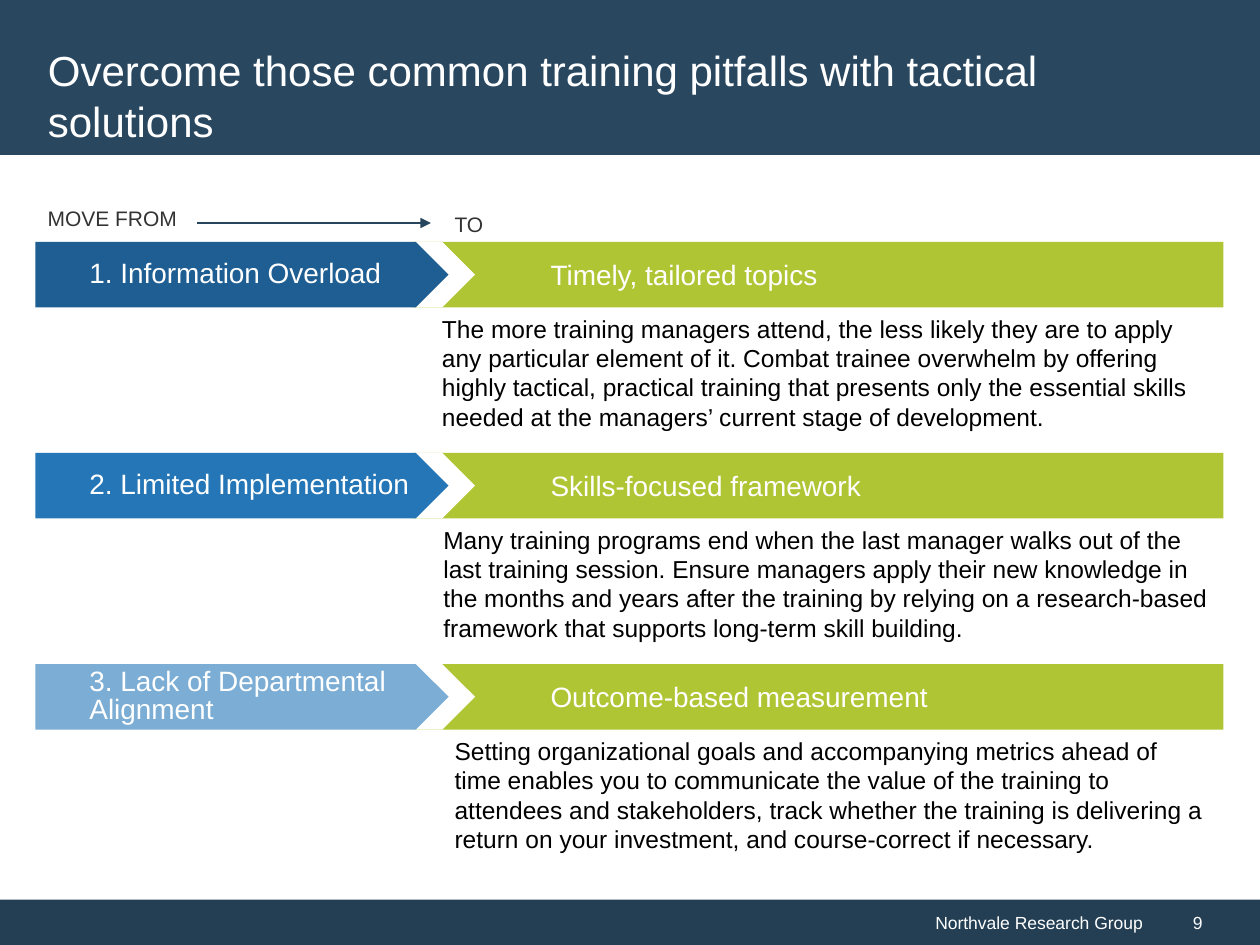
from pptx import Presentation
from pptx.dml.color import RGBColor
from pptx.enum.shapes import MSO_CONNECTOR, MSO_SHAPE
from pptx.enum.text import MSO_ANCHOR, MSO_AUTO_SIZE, PP_ALIGN
from pptx.oxml.ns import qn
from pptx.util import Inches, Pt
from lxml import etree

RECT, PENTAGON = MSO_SHAPE.RECTANGLE, MSO_SHAPE.PENTAGON
STRAIGHT = MSO_CONNECTOR.STRAIGHT
LEFT, RIGHT = PP_ALIGN.LEFT, PP_ALIGN.RIGHT
TOP, MIDDLE = MSO_ANCHOR.TOP, MSO_ANCHOR.MIDDLE

SLIDE_W, SLIDE_H = 10, 7.5
MARGIN, CONTENT_RIGHT = 0.28, 9.71
ROW_TOP, ROW_PITCH, BAR_H = 1.92, 1.675, 0.52
TITLE_ONLY = 5

# Pitfall, its colour, the solution, the explanation and its left edge
ROWS = [
    ("1. Information Overload", "1E5E92", "Timely, tailored topics",
     "The more training managers attend, the less likely they are to apply any "
     "particular element of it. Combat trainee overwhelm by offering highly "
     "tactical, practical training that presents only the essential skills needed "
     "at the managers’ current stage of development.", 3.41),
    ("2. Limited Implementation", "2576B7", "Skills-focused framework",
     "Many training programs end when the last manager walks out of the last "
     "training session. Ensure managers apply their new knowledge in the months "
     "and years after the training by relying on a research-based framework that "
     "supports long-term skill building.", 3.42),
    ("3. Lack of Departmental Alignment", "7CADD4", "Outcome-based measurement",
     "Setting organizational goals and accompanying metrics ahead of time enables "
     "you to communicate the value of the training to attendees and stakeholders, "
     "track whether the training is delivering a return on your investment, and "
     "course-correct if necessary.", 3.51),
]


def colour(hex_string):
    return RGBColor.from_string(hex_string)


def write(shape, text, size, hex_string, align=LEFT, anchor=MIDDLE,
          insets=(0.1, 0.05, 0.1, 0.05), spacing=None):
    frame = shape.text_frame
    frame.word_wrap = True
    frame.auto_size = MSO_AUTO_SIZE.NONE
    frame.vertical_anchor = anchor
    (frame.margin_left, frame.margin_top,
     frame.margin_right, frame.margin_bottom) = map(Inches, insets)
    frame.text = text
    paragraph = frame.paragraphs[0]
    paragraph.alignment = align
    paragraph.line_spacing = spacing
    paragraph.font.name = "Arial"
    paragraph.font.size = Pt(size)
    paragraph.font.color.rgb = colour(hex_string)


def add_block(slide, kind, box, fill):
    block = slide.shapes.add_shape(kind, *map(Inches, box))
    block.shadow.inherit = False
    block.fill.solid()
    block.fill.fore_color.rgb = colour(fill)
    block.line.fill.background()
    return block


def add_text(slide, box, text, size, hex_string):
    write(slide.shapes.add_textbox(*map(Inches, box)), text, size, hex_string, anchor=TOP)


def add_header(slide, box, text):
    add_block(slide, RECT, box, "29475F")
    left, top, width, height = box
    title = slide.shapes.title
    title.left, title.top = Inches(left + MARGIN), Inches(top + MARGIN)
    title.width, title.height = Inches(CONTENT_RIGHT - MARGIN), Inches(height - MARGIN)
    write(title, text, 24, "FFFFFF")
    # Bring the title in front of its band
    slide.shapes._spTree.append(title._element)


def add_footer(slide, box, owner, number):
    left, top, width, height = box
    split = width * 11 / 12
    owner_block = add_block(slide, RECT, (left, top, split, height), "243F54")
    write(owner_block, owner, 10, "FFFFFF", align=RIGHT)
    number_block = add_block(slide, RECT, (left + split, top, width - split, height), "243F54")
    write(number_block, number, 10, "FFFFFF", insets=(0.3, 0.05, 0.1, 0.05))


def add_direction(slide, box):
    left, top, width, height = box
    add_text(slide, (left, top, 1.97, height), "MOVE FROM", 12, "333333")
    add_text(slide, (left + 3.23, top + 0.05, 1.97, height), "TO", 12, "333333")
    arrow_y = Inches(top + 0.19)
    arrow = slide.shapes.add_connector(
        STRAIGHT, Inches(left + 1.28), arrow_y, Inches(left + 3.14), arrow_y)
    arrow.line.color.rgb = colour("27465E")
    arrow.line.width = Pt(0.75)
    etree.SubElement(arrow.line._get_or_add_ln(), qn("a:tailEnd"), type="triangle")
    etree.SubElement(arrow._element.spPr, qn("a:effectLst"))


def add_row(slide, box, pitfall, fill, solution, explanation, text_left):
    left, top, width, height = box
    right = left + width
    solution_left = left + 2.99
    solution_bar = add_block(
        slide, RECT, (solution_left, top, right - solution_left, BAR_H), "B0C534")
    write(solution_bar, solution, 16, "FFFFFF", insets=(1.1, 0.05, 0.1, 0.05))
    # White gap between the arrow and the solution
    add_block(slide, PENTAGON, (left + 0.84, top, 2.65, BAR_H), "FFFFFF")
    pitfall_arrow = add_block(slide, PENTAGON, (left, top, 3.28, BAR_H), fill)
    write(pitfall_arrow, pitfall, 16, "FFFFFF", insets=(0.43, 0, 0, 0), spacing=Pt(16))
    add_text(slide, (text_left, top + BAR_H, right - text_left, height - BAR_H),
             explanation, 14, "000000")


def main():
    deck = Presentation()
    deck.slide_width, deck.slide_height = Inches(SLIDE_W), Inches(SLIDE_H)
    slide = deck.slides.add_slide(deck.slide_layouts[TITLE_ONLY])

    add_footer(slide, (0, 7.14, SLIDE_W, SLIDE_H - 7.14), "Northvale Research Group", "9")
    add_header(slide, (0, 0, SLIDE_W, 1.23),
               "Overcome those common training pitfalls with tactical solutions")
    content_width = CONTENT_RIGHT - MARGIN
    for index, row in enumerate(ROWS):
        add_row(slide, (MARGIN, ROW_TOP + index * ROW_PITCH, content_width, 1.56), *row)
    add_direction(slide, (MARGIN, 1.58, content_width, 0.3))

    deck.save("out.pptx")


if __name__ == "__main__":
    main()
